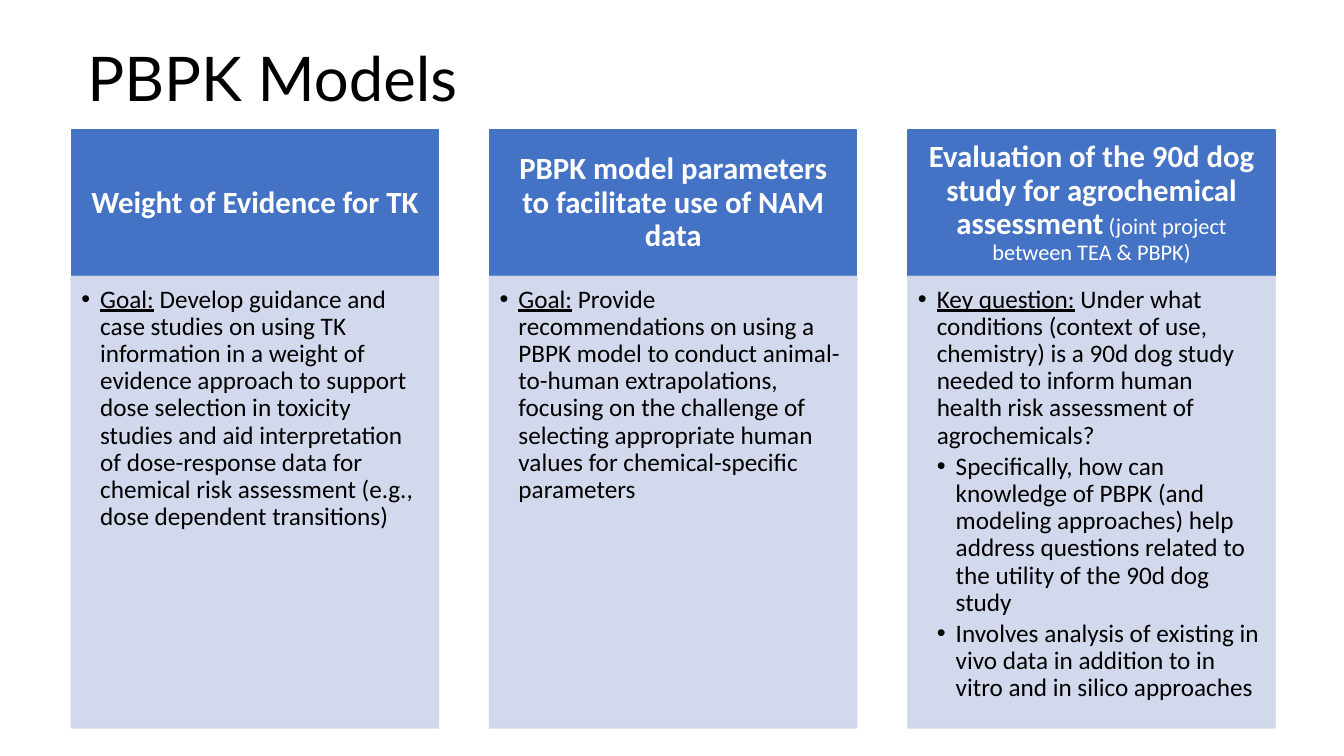
import dataclasses

import lxml.etree
import pptx
import pptx.dml.color
import pptx.enum.shapes
import pptx.enum.text
import pptx.oxml.ns
import pptx.util

Pt = pptx.util.Pt
ALIGN = pptx.enum.text.PP_ALIGN
ANCHOR = pptx.enum.text.MSO_ANCHOR


@dataclasses.dataclass(frozen=True)
class Theme:
    title_font: str = "Lato"
    body_font: str = "Calibri"
    title_size: float = 44
    heading_size: float = 22
    body_size: float = 18
    note_size: float = 16
    ink: str = "000000"
    heading_ink: str = "FFFFFF"
    heading_fill: str = "4472C4"
    body_fill: str = "CFD5EA"
    body_opacity: int = 90


def rgb(color):
    return pptx.dml.color.RGBColor.from_string(color)


def add_child(parent, tag, **attributes):
    return lxml.etree.SubElement(parent, pptx.oxml.ns.qn(tag), **attributes)


def add_run(text, *, paragraph, size, font, color, bold=False, underline=False):
    run = paragraph.add_run()
    run.text = text
    run.font.size = Pt(size)
    run.font.name = font
    run.font.color.rgb = rgb(color)
    run.font.bold = bold
    run.font.underline = underline


class SlideBuilder:
    def __init__(self, slide, theme):
        self.slide = slide
        self.theme = theme

    def frame(self, shape, anchor, margins):
        frame = shape.text_frame
        frame.word_wrap = True
        frame.vertical_anchor = anchor
        (frame.margin_left, frame.margin_top,
         frame.margin_right, frame.margin_bottom) = [Pt(margin) for margin in margins]
        return frame

    def title(self, text, box):
        heading = self.slide.shapes.add_textbox(*[Pt(length) for length in box])
        frame = self.frame(heading, ANCHOR.MIDDLE, (7.2, 3.6, 7.2, 3.6))
        paragraph = frame.paragraphs[0]
        paragraph.line_spacing = 0.9
        add_run(text, paragraph=paragraph, size=self.theme.title_size,
                font=self.theme.title_font, color=self.theme.ink)

    def panel(self, box, color, opacity=100):
        panel = self.slide.shapes.add_shape(
            pptx.enum.shapes.MSO_SHAPE.RECTANGLE, *[Pt(length) for length in box])
        panel.shadow.inherit = False
        panel.fill.solid()
        panel.fill.fore_color.rgb = rgb(color)
        panel.line.color.rgb = rgb(color)
        panel.line.width = Pt(1)
        if opacity < 100:
            for swatch in panel.element.spPr.iter(pptx.oxml.ns.qn("a:srgbClr")):
                add_child(swatch, "a:alpha", val=str(opacity * 1000))
        return panel

    def heading(self, box, text, note):
        theme = self.theme
        panel = self.panel(box, theme.heading_fill)
        paragraph = self.frame(panel, ANCHOR.MIDDLE, (12.24, 7.2, 12.24, 7.2)).paragraphs[0]
        paragraph.alignment = ALIGN.CENTER
        paragraph.line_spacing = 0.9
        style = dict(paragraph=paragraph, font=theme.body_font, color=theme.heading_ink)
        add_run(text, size=theme.heading_size, bold=True, **style)
        if note:
            add_run(" " + note, size=theme.note_size, **style)

    def body(self, box, label, statement, details):
        theme = self.theme
        panel = self.panel(box, theme.body_fill, theme.body_opacity)
        frame = self.frame(panel, ANCHOR.TOP, (7.2, 7.2, 10.08, 11.52))
        style = dict(size=theme.body_size, font=theme.body_font, color=theme.ink)
        goal = self.bullet(frame.paragraphs[0], 1)
        add_run(label, paragraph=goal, underline=True, **style)
        add_run(" " + statement, paragraph=goal, **style)
        for detail in details:
            add_run(detail, paragraph=self.bullet(frame.add_paragraph(), 2), **style)

    def bullet(self, paragraph, level):
        indent = Pt(13.5)
        properties = paragraph._p.get_or_add_pPr()
        properties.set("marL", str(indent * level))
        properties.set("indent", str(-indent))
        add_child(properties, "a:buFont", typeface="Arial")
        add_child(properties, "a:buChar", char="•")
        paragraph.level = level
        paragraph.alignment = ALIGN.LEFT
        paragraph.line_spacing = 0.9
        paragraph.space_after = Pt(2.7)
        return paragraph


PROJECTS = [
    ("Weight of Evidence for TK", "", "Goal:",
     "Develop guidance and case studies on using TK information in a weight of evidence "
     "approach to support dose selection in toxicity studies and aid interpretation of "
     "dose-response data for chemical risk assessment (e.g., dose dependent transitions)", []),
    ("PBPK model parameters to facilitate use of NAM data", "", "Goal:",
     "Provide recommendations on using a PBPK model to conduct animal-to-human "
     "extrapolations, focusing on the challenge of selecting appropriate human values "
     "for chemical-specific parameters", []),
    ("Evaluation of the 90d dog study for agrochemical assessment",
     "(joint project between TEA & PBPK)", "Key question:",
     "Under what conditions (context of use, chemistry) is a 90d dog study needed to "
     "inform human health risk assessment of agrochemicals?",
     ["Specifically, how can knowledge of PBPK (and modeling approaches) help address "
      "questions related to the utility of the 90d dog study",
      "Involves analysis of existing in vivo data in addition to in vitro and in silico "
      "approaches"]),
]


def main():
    presentation = pptx.Presentation()
    presentation.slide_width = Pt(960)
    presentation.slide_height = Pt(540)
    slide = presentation.slides.add_slide(presentation.slide_layouts[6])
    builder = SlideBuilder(slide, Theme())
    builder.title("PBPK Models", (55.4, 5.8, 828, 104.4))

    first_left, pitch, width = 51, 298.8, 262.2
    top, heading_height, body_height = 92.9, 104.4, 322.6
    for column, (heading, note, label, statement, details) in enumerate(PROJECTS):
        left = first_left + column * pitch
        builder.heading((left, top, width, heading_height), heading, note)
        builder.body((left, top + heading_height, width, body_height),
                     label, statement, details)

    presentation.save("out.pptx")


if __name__ == "__main__":
    main()
